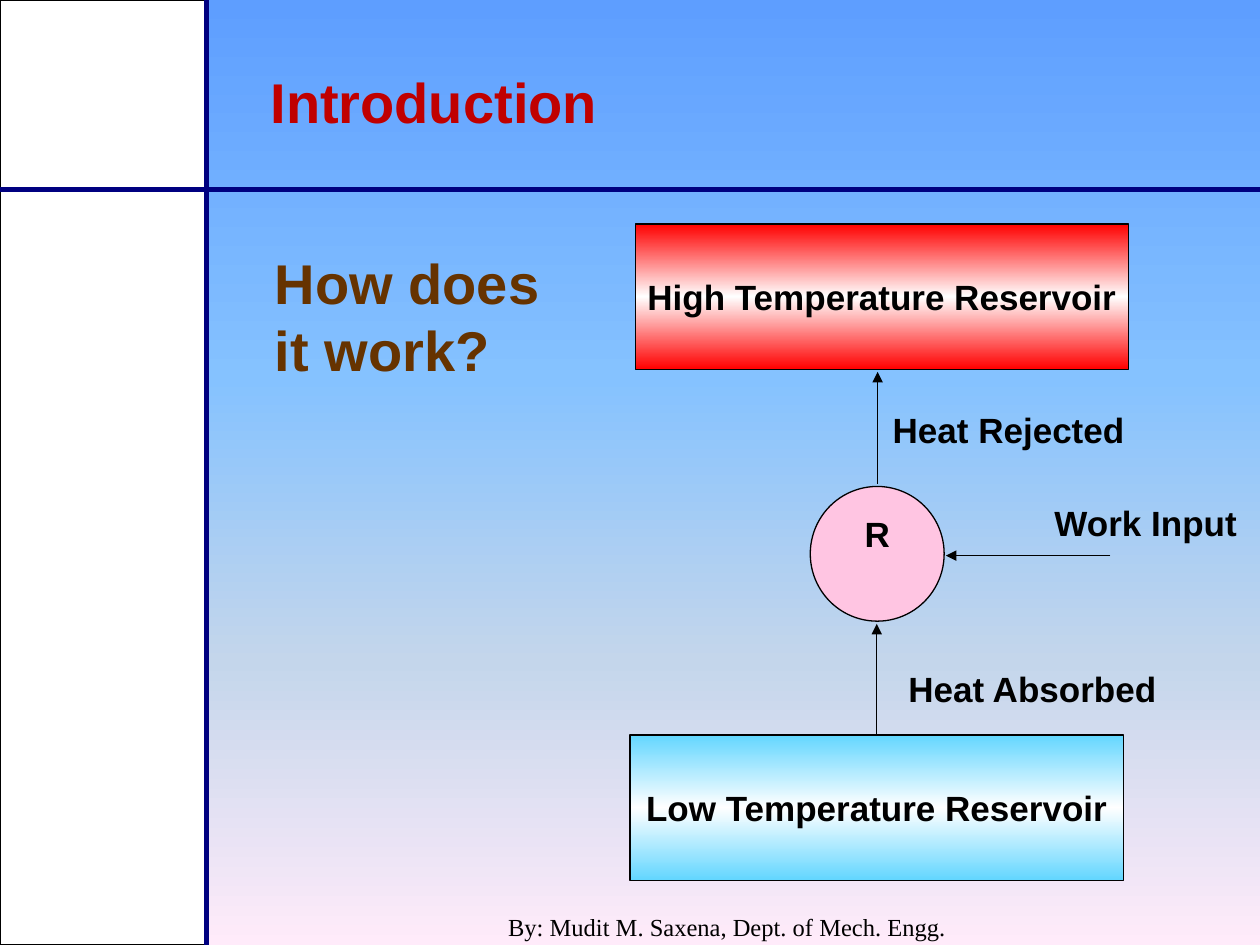
from lxml.etree import SubElement
from pptx import Presentation
from pptx.dml.color import RGBColor
from pptx.enum.shapes import MSO_CONNECTOR as CONNECTOR, MSO_SHAPE as SHAPE
from pptx.enum.text import MSO_ANCHOR as ANCHOR, PP_ALIGN as ALIGN
from pptx.oxml.ns import qn
from pptx.util import Pt

BLACK = RGBColor(0x00, 0x00, 0x00)
WHITE = RGBColor(0xFF, 0xFF, 0xFF)
NAVY = RGBColor(0x00, 0x00, 0x80)
DARK_RED = RGBColor(0xC0, 0x00, 0x00)
BROWN = RGBColor(0x66, 0x33, 0x00)
PINK = RGBColor(0xFF, 0xC5, 0xE2)
RED = RGBColor(0xFF, 0x00, 0x00)
SKY = RGBColor(0x63, 0xD6, 0xFF)
BACKGROUND_STOPS = [
    (0, RGBColor(0x5E, 0x9E, 0xFF)),
    (40, RGBColor(0x85, 0xC2, 0xFF)),
    (70, RGBColor(0xC4, 0xD6, 0xEB)),
    (100, RGBColor(0xFF, 0xEB, 0xFA)),
]


def apply_gradient(fill, element, stops):
    """Fill from top to bottom; element is the XML that holds the fill."""
    fill.gradient()
    fill.gradient_angle = 270
    stop_list = element.find(".//" + qn("a:gsLst"))
    for old_stop in list(stop_list):
        stop_list.remove(old_stop)
    for percent, color in stops:
        stop = SubElement(stop_list, qn("a:gs"), pos=str(percent * 1000))
        SubElement(stop, qn("a:srgbClr"), val=str(color))


def write_text(shape, text, size=20, color=BLACK, font="Arial", bold=True,
               align=ALIGN.LEFT, anchor=ANCHOR.TOP, wrap=True):
    frame = shape.text_frame
    frame.text = text
    frame.word_wrap = wrap
    frame.vertical_anchor = anchor
    paragraph = frame.paragraphs[0]
    paragraph.alignment = align
    run_font = paragraph.runs[0].font
    run_font.name = font
    run_font.size = Pt(size)
    run_font.bold = bold
    run_font.color.rgb = color


presentation = Presentation()
presentation.slide_width = Pt(720)
presentation.slide_height = Pt(540)
slide = presentation.slides.add_slide(presentation.slide_layouts[6])
shapes = slide.shapes
apply_gradient(slide.background.fill, slide.element, BACKGROUND_STOPS)

# Side panel, reservoirs and refrigerator
drawn = {}
for name, preset, left, top, width, height in [
    ("panel", SHAPE.RECTANGLE, 0, 0, 117.5, 540),
    ("high", SHAPE.RECTANGLE, 363, 128, 282, 83),
    ("low", SHAPE.RECTANGLE, 360, 420, 282, 83),
    ("refrigerator", SHAPE.OVAL, 463, 278, 76.5, 77),
]:
    shape = shapes.add_shape(preset, Pt(left), Pt(top), Pt(width), Pt(height))
    shape.shadow.inherit = False
    shape.line.color.rgb = BLACK
    shape.line.width = Pt(0.75)
    drawn[name] = shape

for name, color in [("panel", WHITE), ("refrigerator", PINK)]:
    drawn[name].fill.solid()
    drawn[name].fill.fore_color.rgb = color

for name, color, label in [
    ("high", RED, "High Temperature Reservoir"),
    ("low", SKY, "Low Temperature Reservoir"),
]:
    reservoir = drawn[name]
    apply_gradient(reservoir.fill, reservoir.element,
                   [(0, color), (50, WHITE), (100, color)])
    write_text(reservoir, label, align=ALIGN.CENTER, anchor=ANCHOR.MIDDLE, wrap=False)

write_text(drawn["refrigerator"], "R", align=ALIGN.CENTER)
drawn["refrigerator"].text_frame.paragraphs[0].space_before = Pt(6)

# Frame rules, then the energy flows
connectors = []
for start_x, start_y, end_x, end_y, color, weight, has_head in [
    (118, 0, 118, 540, NAVY, 3, False),
    (0, 108.5, 720, 108.5, NAVY, 3, False),
    (501, 420, 501, 356.5, BLACK, 0.75, True),
    (501.5, 276.5, 501.5, 212.5, BLACK, 0.75, True),
    (634.5, 317.5, 540.5, 317.5, BLACK, 0.75, True),
]:
    connector = shapes.add_connector(
        CONNECTOR.STRAIGHT, Pt(start_x), Pt(start_y), Pt(end_x), Pt(end_y))
    connector.line.color.rgb = color
    connector.line.width = Pt(weight)
    if has_head:
        SubElement(connector.line._get_or_add_ln(), qn("a:tailEnd"), type="triangle")
    SubElement(connector.element.spPr, qn("a:effectLst"))
    connectors.append(connector)
heat_absorbed = connectors[2]
heat_absorbed.begin_connect(drawn["low"], 0)

# Headings, flow labels and footer
for text, left, top, width, height, style in [
    ("Introduction", 147.5, 35.5, 552, 45,
     {"size": 32, "color": DARK_RED, "anchor": ANCHOR.MIDDLE}),
    ("How does it work?", 150, 138.5, 193, 84, {"size": 32, "color": BROWN}),
    ("Work Input", 595.5, 283, 124.5, 31, {}),
    ("Heat Absorbed", 512, 378, 178.5, 32, {}),
    ("Heat Rejected", 503, 230, 178.5, 37, {}),
    ("By: Mudit M. Saxena, Dept. of Mech. Engg.", 246, 517.5, 339, 22.5,
     {"size": 14, "font": "Times New Roman", "bold": False, "align": ALIGN.CENTER}),
]:
    text_box = shapes.add_textbox(Pt(left), Pt(top), Pt(width), Pt(height))
    write_text(text_box, text, **style)

presentation.save("out.pptx")
